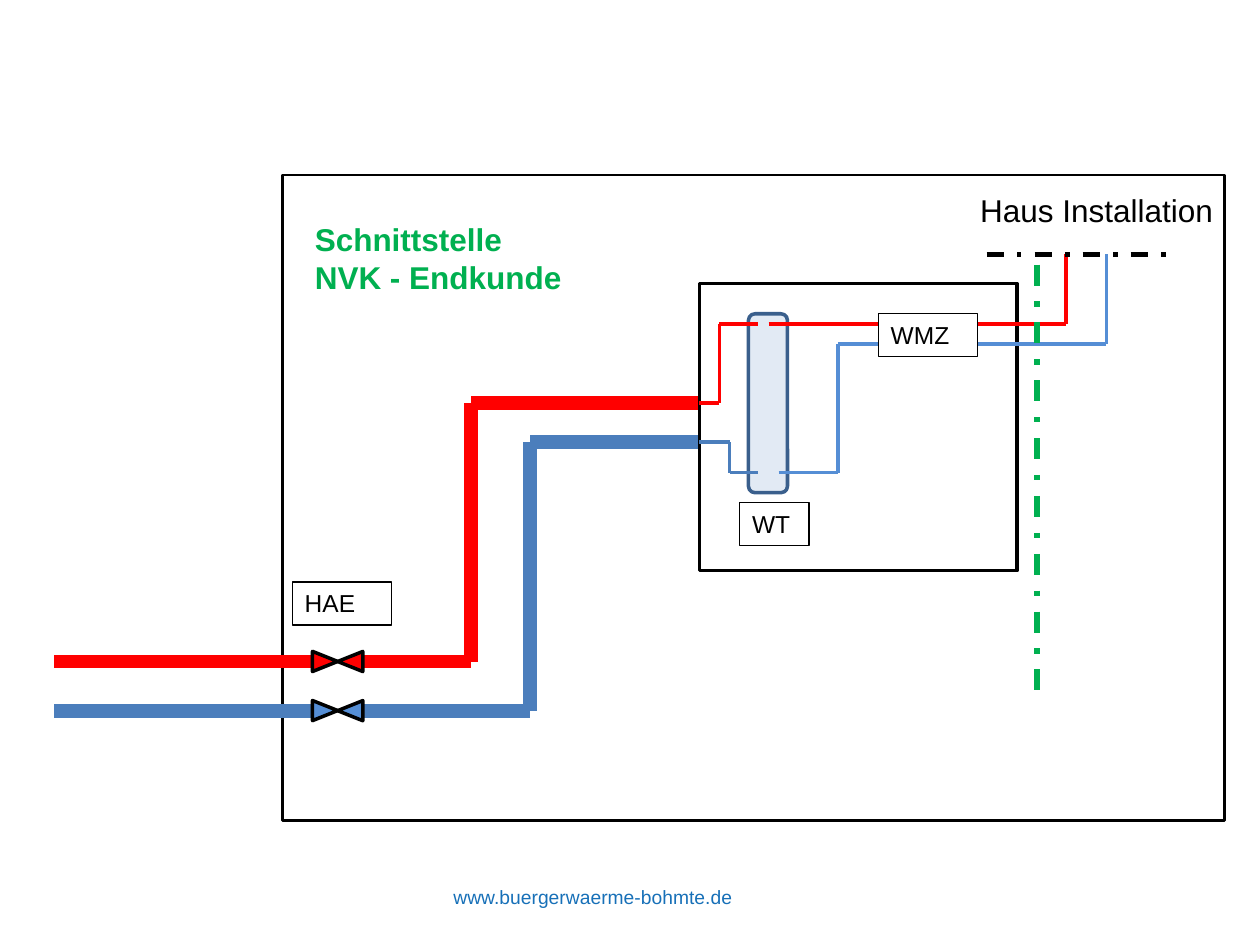
"""Build the heat transfer diagram between the district network and a house installation."""
import lxml.etree
import pptx
import pptx.dml.color
import pptx.enum.dml
import pptx.enum.shapes
import pptx.enum.text
import pptx.oxml.ns
import pptx.util

RGB = pptx.dml.color.RGBColor
BLACK = RGB(0x00, 0x00, 0x00)
WHITE = RGB(0xFF, 0xFF, 0xFF)
RED = RGB(0xFF, 0x00, 0x00)
RETURN_BLUE = RGB(0x4B, 0x7E, 0xBC)
HOUSE_BLUE = RGB(0x55, 0x8E, 0xD5)
EXCHANGER_FILL = RGB(0x4F, 0x81, 0xBD)
EXCHANGER_EDGE = RGB(0x3A, 0x5F, 0x8C)
GREEN = RGB(0x00, 0xB0, 0x50)
LINK_BLUE = RGB(0x17, 0x70, 0xB8)
KIND = pptx.enum.shapes.MSO_SHAPE
DASH_DOT = pptx.enum.dml.MSO_LINE.DASH_DOT

deck = pptx.Presentation()
deck.slide_width = pptx.util.Inches(10)
deck.slide_height = pptx.util.Inches(7.5)
COLUMN = deck.slide_width / 100
ROW = deck.slide_height / 75
slide = deck.slides.add_slide(deck.slide_layouts[6])


def outline(parent, kind, left, top, width, height, fill, edge, weight):
    part = parent.add_shape(kind, round(left * COLUMN), round(top * ROW),
                            round(width * COLUMN), round(height * ROW))
    part.shadow.inherit = False
    part.fill.solid()
    part.fill.fore_color.rgb = fill
    part.line.color.rgb = edge
    part.line.width = pptx.util.Pt(weight)
    return part


def route(color, weight, points, dash=None):
    for (x1, y1), (x2, y2) in zip(points, points[1:]):
        pipe = slide.shapes.add_connector(
            pptx.enum.shapes.MSO_CONNECTOR.STRAIGHT, round(x1 * COLUMN), round(y1 * ROW),
            round(x2 * COLUMN), round(y2 * ROW))
        pipe.line.color.rgb = color
        pipe.line.width = pptx.util.Pt(weight)
        if dash is not None:
            pipe.line.dash_style = dash
        lxml.etree.SubElement(pipe._element.spPr, pptx.oxml.ns.qn("a:effectLst"))


outline(slide.shapes, KIND.RECTANGLE, 22.4, 13.9, 74.8, 51.2, WHITE, BLACK, 1.5)

network = [(RED, RED, 52.5, 37.4, 32), (RETURN_BLUE, HOUSE_BLUE, 56.4, 42.1, 35.1)]
for pipe_color, valve_color, main_row, riser, station_row in network:
    route(pipe_color, 8, [(4.3, main_row), (24.8, main_row)])
    route(pipe_color, 8, [(28.7, main_row), (riser, main_row),
                          (riser, station_row), (55.5, station_row)])
    valve = slide.shapes.add_group_shape()
    for left, turn in [(25, 90), (27, 270)]:
        half = outline(valve.shapes, KIND.ISOSCELES_TRIANGLE, left, main_row - 1,
                       1.6, 2, valve_color, BLACK, 2)
        half.rotation = turn

outline(slide.shapes, KIND.RECTANGLE, 55.5, 22.5, 25.2, 22.8, WHITE, BLACK, 2)
exchanger = outline(slide.shapes, KIND.ROUNDED_RECTANGLE, 59.4, 24.9, 3.1, 14.2,
                    EXCHANGER_FILL, EXCHANGER_EDGE, 2)
tint = exchanger._element.spPr.find(".//" + pptx.oxml.ns.qn("a:srgbClr"))
lxml.etree.SubElement(tint, pptx.oxml.ns.qn("a:alpha")).set("val", "16000")

for color, points in [
    (RETURN_BLUE, [(55.5, 35.1), (57.9, 35.1), (57.9, 37.5), (60.2, 37.5)]),
    (RED, [(55.5, 32), (57.1, 32), (57.1, 25.7), (60.2, 25.7)]),
    (RED, [(61, 25.7), (69.7, 25.7)]),
    (HOUSE_BLUE, [(61.8, 37.5), (66.5, 37.5), (66.5, 27.3), (69.7, 27.3)]),
    (RED, [(77.6, 25.7), (84.6, 25.7), (84.6, 20.2)]),
    (HOUSE_BLUE, [(77.6, 27.3), (87.8, 27.3), (87.8, 20.2)]),
]:
    route(color, 2, points)
route(BLACK, 2.5, [(78.3, 20.2), (93.3, 20.2)], DASH_DOT)
route(GREEN, 3, [(82.3, 21), (82.3, 54.8)], DASH_DOT)

for wording, left, top, width, height, size, color, bold, framed in [
    ("WMZ", 69.7, 24.9, 7.9, 3.4, 14, BLACK, False, True),
    ("WT", 58.7, 39.9, 5.5, 3.4, 14, BLACK, False, True),
    ("HAE", 23.2, 46.2, 7.9, 3.4, 14, BLACK, False, True),
    ("Haus Installation", 76.8, 14.7, 25.2, 4, 18, BLACK, False, False),
    ("Schnittstelle\nNVK - Endkunde", 24, 17, 22.5, 7.1, 18, GREEN, True, False),
    ("www.buergerwaerme-bohmte.de", 35, 69.8, 26, 3.9, 11, LINK_BLUE, False, False),
]:
    label = slide.shapes.add_textbox(round(left * COLUMN), round(top * ROW),
                                     round(width * COLUMN), round(height * ROW))
    if framed:
        label.line.color.rgb = BLACK
        label.line.width = pptx.util.Pt(0.75)
    label.text_frame.word_wrap = not bold
    label.text_frame.auto_size = pptx.enum.text.MSO_AUTO_SIZE.SHAPE_TO_FIT_TEXT
    label.text_frame.text = wording
    for paragraph in label.text_frame.paragraphs:
        for run in paragraph.runs:
            run.font.name = "Arial"
            run.font.size = pptx.util.Pt(size)
            run.font.bold = bold
            run.font.color.rgb = color

deck.save("out.pptx")
